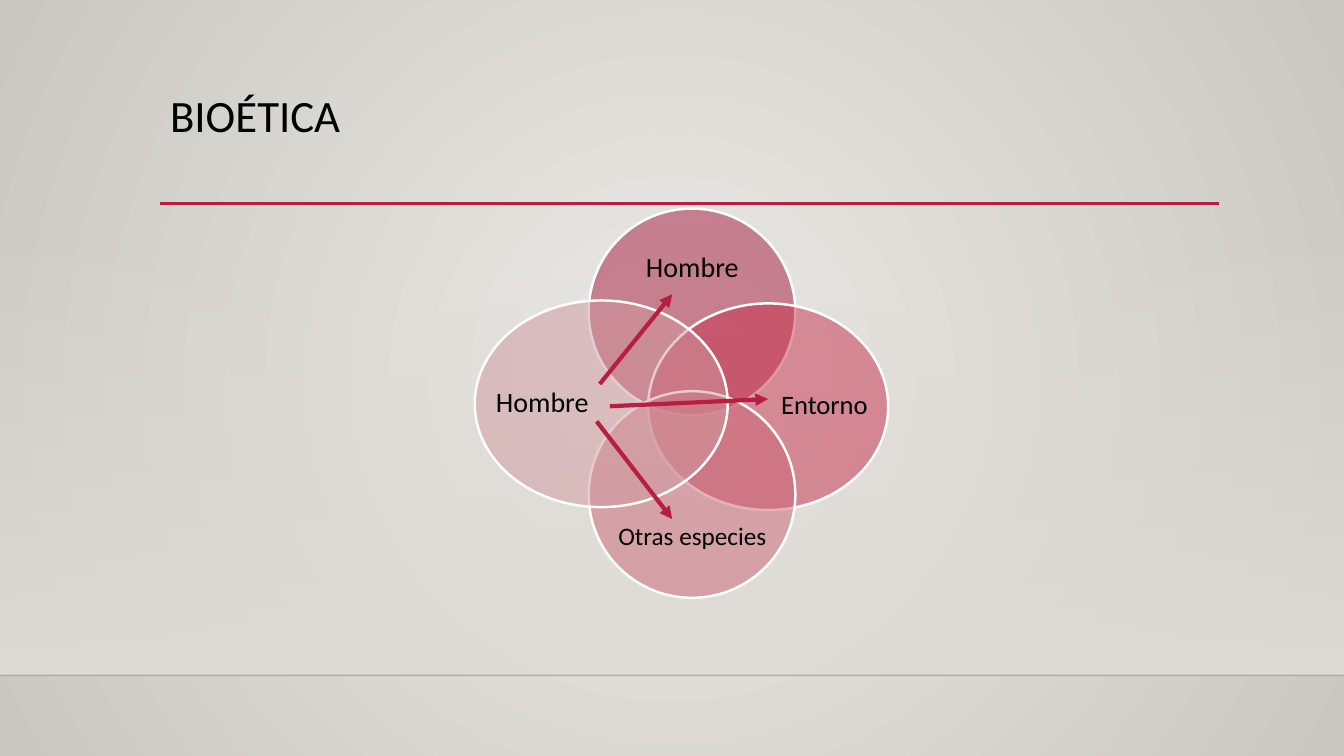
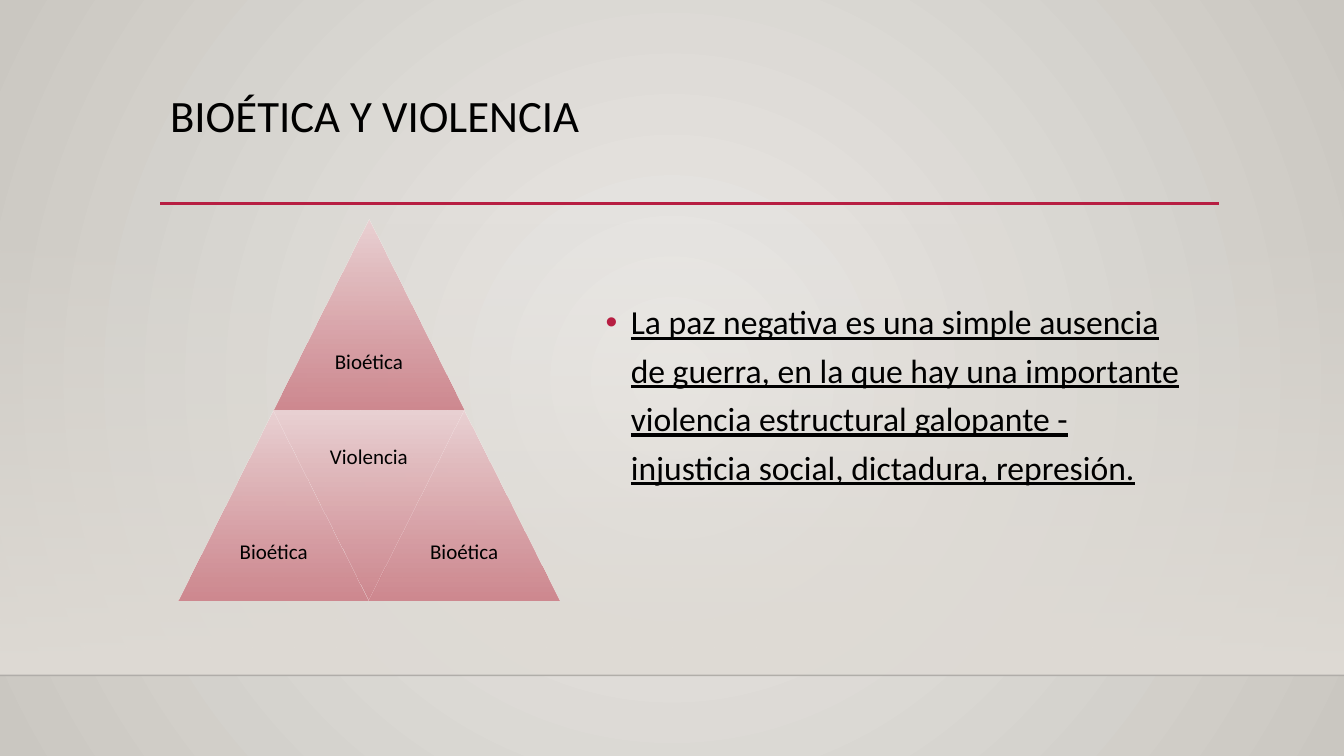
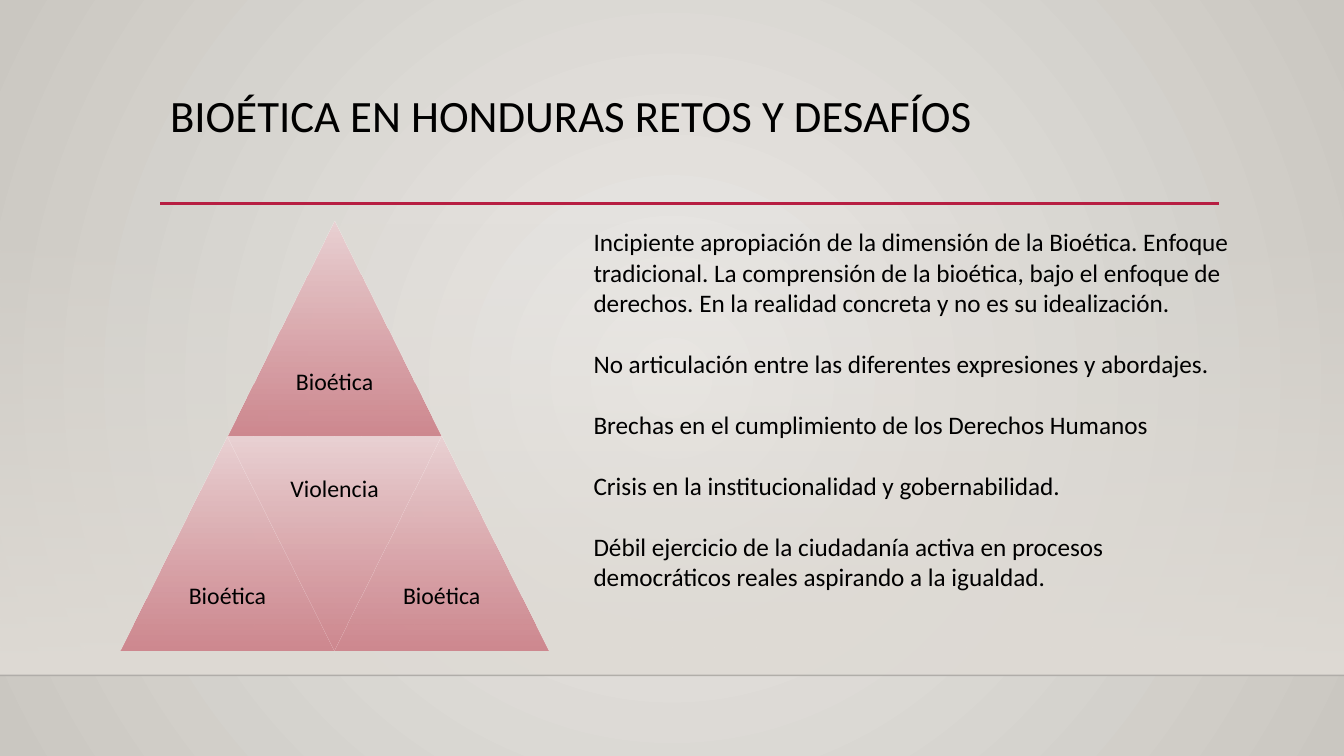
from dataclasses import dataclass

from lxml.etree import SubElement
from pptx import Presentation
from pptx.dml.color import RGBColor
from pptx.enum.shapes import MSO_CONNECTOR, MSO_SHAPE
from pptx.enum.text import MSO_ANCHOR, PP_ALIGN
from pptx.oxml.ns import qn
from pptx.util import Pt

FONT = "Calibri"
BLACK = RGBColor(0x00, 0x00, 0x00)
WHITE = RGBColor(0xFF, 0xFF, 0xFF)
FLOOR = RGBColor(0x00, 0x00, 0x01)
CRIMSON = RGBColor(0xB7, 0x1E, 0x42)
PAPER_LIGHT = RGBColor(0xEC, 0xEA, 0xE7)
PAPER_DARK = RGBColor(0xCA, 0xC7, 0xC1)
MIST = RGBColor(0xDF, 0xDB, 0xD5)
ROSE_LIGHT = RGBColor(0xEA, 0xD1, 0xD3)
ROSE_DARK = RGBColor(0xCD, 0x82, 0x8A)

WIDTH, HEIGHT = 960, 540
FLOOR_Y, RULE_Y = 482.4, 145.4


@dataclass(frozen=True)
class Area:
    left: float
    top: float
    width: float
    height: float

    def lengths(self):
        return Pt(self.left), Pt(self.top), Pt(self.width), Pt(self.height)


@dataclass(frozen=True)
class Stop:
    position: int
    color: RGBColor
    opacity: int = 100


@dataclass(frozen=True)
class Circle:
    area: Area
    color: RGBColor
    label: str
    label_area: Area
    size: float


@dataclass(frozen=True)
class Segment:
    start: tuple[float, float]
    end: tuple[float, float]


@dataclass(frozen=True)
class Tile:
    column: int
    row: int
    label: str
    inverted: bool = False


CIRCLES = [
    Circle(Area(420.5, 149, 147.6, 147.6), RGBColor(0xA6, 0x1B, 0x3C),
           "Hombre", Area(437.6, 168.5, 113.8, 46.8), 20),
    Circle(Area(463, 216.7, 171.4, 147.6), RGBColor(0xC8, 0x32, 0x4F),
           "Entorno", Area(555.8, 233.3, 66.2, 113.8), 19),
    Circle(Area(420.5, 279.4, 147.6, 147.6), RGBColor(0xCA, 0x67, 0x76),
           "Otras especies", Area(437.6, 360.7, 113.8, 46.8), 18),
    Circle(Area(339.1, 214.6, 180.7, 147.6), RGBColor(0xD0, 0x99, 0x9F),
           "Hombre", Area(352.8, 231.1, 69.1, 113.8), 20),
]
ARROWS = [
    Segment((428.4, 274.3), (480.2, 210.2)),
    Segment((435.6, 290.2), (548.6, 285.1)),
    Segment((426.2, 301), (480.2, 370.8)),
]
TILES = [
    Tile(1, 0, "Bioética"),
    Tile(0, 1, "Bioética"),
    Tile(1, 1, "Violencia", inverted=True),
    Tile(2, 1, "Bioética"),
]
PEACE = ("La paz negativa es una simple ausencia de guerra, en la que hay una "
         "importante violencia estructural galopante - injusticia social, "
         "dictadura, represión.")
CHALLENGES = [
    "Incipiente apropiación de la dimensión de la Bioética. Enfoque tradicional. "
    "La comprensión de la bioética, bajo el enfoque de derechos. En la realidad "
    "concreta y no es su idealización.",
    "No articulación entre las diferentes expresiones y abordajes.",
    "Brechas en el cumplimiento de los Derechos Humanos",
    "Crisis en la institucionalidad y gobernabilidad.",
    "Débil ejercicio de la ciudadanía activa en procesos democráticos reales "
    "aspirando a la igualdad.",
]


def set_opacity(element, percent: int) -> None:
    color = element.find(".//" + qn("a:srgbClr"))
    SubElement(color, qn("a:alpha"), val=str(percent * 1000))


def set_gradient(properties, stops: list[Stop], radial: bool = False) -> None:
    solid = properties.find(qn("a:solidFill"))
    gradient = solid.makeelement(qn("a:gradFill"), {"rotWithShape": "0"})
    stop_list = SubElement(gradient, qn("a:gsLst"))
    for stop in stops:
        mark = SubElement(stop_list, qn("a:gs"), pos=str(stop.position * 1000))
        SubElement(mark, qn("a:srgbClr"), val=str(stop.color))
        if stop.opacity < 100:
            set_opacity(mark, stop.opacity)
    if radial:
        shade = SubElement(gradient, qn("a:path"), path="circle")
        SubElement(shade, qn("a:fillToRect"), l="50000", t="50000", r="50000", b="50000")
    else:
        SubElement(gradient, qn("a:lin"), ang="5400000", scaled="0")
    properties.replace(solid, gradient)


def add_text(page, area: Area, lines: list[str], *, size: float, margin: float | None = None,
             anchor=MSO_ANCHOR.TOP, align=PP_ALIGN.LEFT, line_spacing: float = 1.0,
             gap: float = 0, underline: bool = False, bullet: bool = False):
    box = page.shapes.add_textbox(*area.lengths())
    frame = box.text_frame
    frame.word_wrap = True
    frame.vertical_anchor = anchor
    if margin is not None:
        frame.margin_left = frame.margin_right = Pt(margin)
        frame.margin_top = frame.margin_bottom = Pt(margin)
    for index, line in enumerate(lines):
        para = frame.add_paragraph() if index else frame.paragraphs[0]
        para.alignment = align
        para.line_spacing = line_spacing
        if index and gap:
            para.space_before = Pt(gap)
        if bullet:
            layout = para._p.get_or_add_pPr()
            layout.set("marL", str(Pt(18)))
            layout.set("indent", str(Pt(-18)))
            SubElement(SubElement(layout, qn("a:buClr")), qn("a:srgbClr"), val=str(CRIMSON))
            SubElement(layout, qn("a:buFont"), typeface="Arial")
            SubElement(layout, qn("a:buChar"), char="•")
        span = para.add_run()
        span.text = line
        span.font.name = FONT
        span.font.size = Pt(size)
        span.font.color.rgb = BLACK
        if underline:
            span.font.underline = True
    return box


def add_label(page, area: Area, text: str, size: float, margin: float) -> None:
    add_text(page, area, [text], size=size, margin=margin, anchor=MSO_ANCHOR.MIDDLE,
             align=PP_ALIGN.CENTER, line_spacing=0.9)


def add_preset(page, preset, area: Area, color: RGBColor):
    shape = page.shapes.add_shape(preset, *area.lengths())
    shape.shadow.inherit = False
    shape.fill.solid()
    shape.fill.fore_color.rgb = color
    shape.line.fill.background()
    return shape


def add_line(page, segment: Segment, color: RGBColor, width: float, *,
             opacity: int = 100, arrow: bool = False) -> None:
    ends = [Pt(value) for value in (*segment.start, *segment.end)]
    connector = page.shapes.add_connector(MSO_CONNECTOR.STRAIGHT, *ends)
    connector.line.color.rgb = color
    connector.line.width = Pt(width)
    properties = connector._element.spPr
    if opacity < 100:
        set_opacity(properties, opacity)
    if arrow:
        SubElement(properties.find(qn("a:ln")), qn("a:tailEnd"), type="triangle")
    SubElement(properties, qn("a:effectLst"))


def add_page(deck, title: str):
    page = deck.slides.add_slide(deck.slide_layouts[6])
    band = add_preset(page, MSO_SHAPE.RECTANGLE,
                      Area(0, 159.1, WIDTH, FLOOR_Y - 159.1), MIST)
    set_gradient(band._element.spPr, [Stop(0, MIST, 0), Stop(100, MIST)])
    add_line(page, Segment((0, FLOOR_Y), (WIDTH, FLOOR_Y)), FLOOR, 1, opacity=20)
    add_line(page, Segment((114.5, RULE_Y), (871, RULE_Y)), CRIMSON, 2.5)
    add_text(page, Area(114.5, 63.4, 756, 82.8), [title], size=32, line_spacing=0.9)
    return page


def add_circle(page, circle: Circle) -> None:
    shape = add_preset(page, MSO_SHAPE.OVAL, circle.area, circle.color)
    set_opacity(shape._element.spPr, 50)
    shape.line.color.rgb = WHITE
    shape.line.width = Pt(1.75)
    add_label(page, circle.label_area, circle.label, circle.size, 0)


def add_pyramid(page, left: float, top: float, side: float, size: float) -> None:
    half = side / 2
    for tile in TILES:
        x, y = left + tile.column * half, top + tile.row * side
        shape = add_preset(page, MSO_SHAPE.ISOSCELES_TRIANGLE,
                           Area(x, y, side, side), ROSE_LIGHT)
        set_gradient(shape._element.spPr, [Stop(0, ROSE_LIGHT), Stop(100, ROSE_DARK, 92)])
        if tile.inverted:
            shape.rotation = 180
        label_top = y if tile.inverted else y + half
        add_label(page, Area(x + side / 4, label_top, half, half), tile.label, size, size * 0.3)


def main() -> None:
    deck = Presentation()
    deck.slide_width, deck.slide_height = Pt(WIDTH), Pt(HEIGHT)
    background = deck.slide_master.background
    background.fill.solid()
    background.fill.fore_color.rgb = PAPER_LIGHT
    set_gradient(deck.slide_master._element.find(".//" + qn("p:bgPr")),
                 [Stop(0, PAPER_LIGHT), Stop(100, PAPER_DARK)], radial=True)

    page = add_page(deck, "BIOÉTICA")
    for circle in CIRCLES:
        add_circle(page, circle)
    for arrow in ARROWS:
        add_line(page, arrow, CRIMSON, 3, arrow=True)

    page = add_page(deck, "BIOÉTICA Y VIOLENCIA")
    add_pyramid(page, 127.5, 157, 136, 15)
    add_text(page, Area(425.5, 206, 430.6, 201.6), [PEACE], size=24,
             line_spacing=1.2, underline=True, bullet=True)

    page = add_page(deck, "BIOÉTICA EN HONDURAS RETOS Y DESAFÍOS")
    add_pyramid(page, 86, 158.6, 153, 17)
    add_text(page, Area(416.9, 158.4, 472.3, 269.3), CHALLENGES, size=18, gap=22)

    deck.save("out.pptx")


if __name__ == "__main__":
    main()
